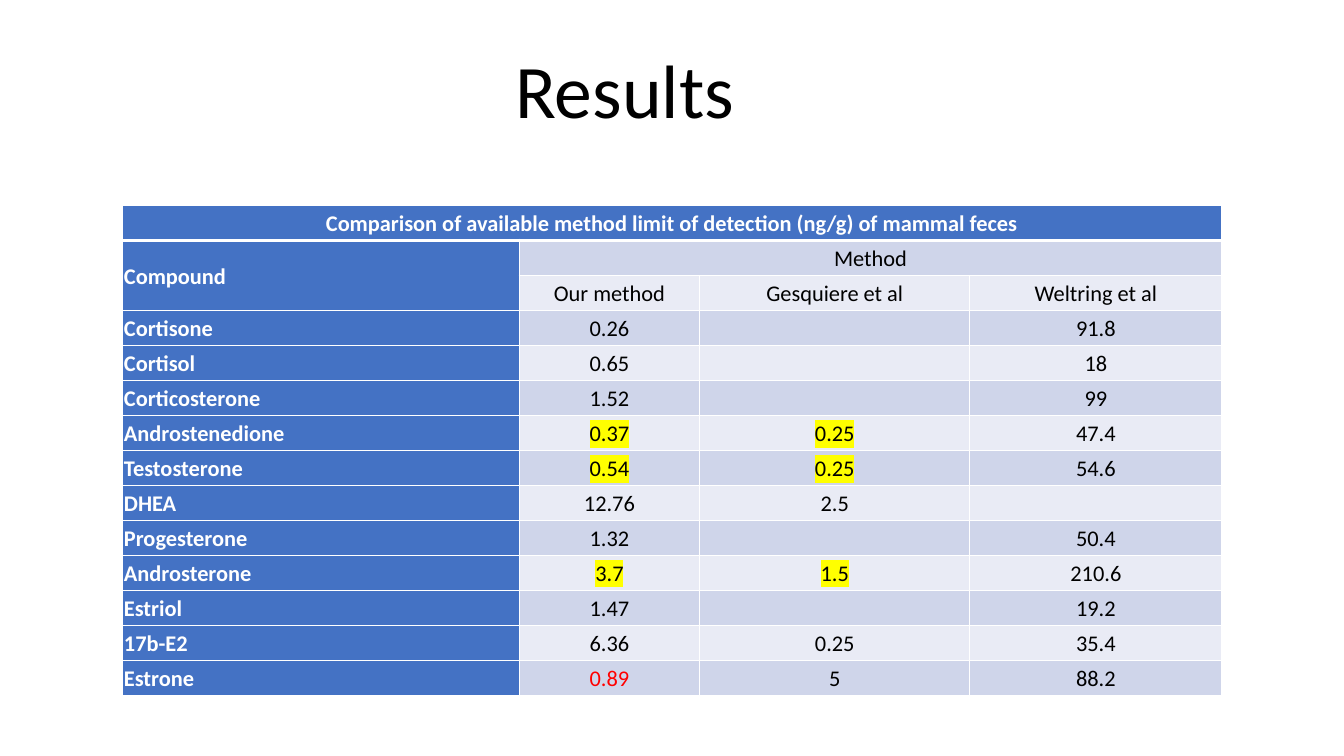
"""Build the results slide: a table comparing detection limits of three methods."""
import pptx
import pptx.dml.color
import pptx.enum.text
import pptx.oxml
import pptx.oxml.ns
import pptx.util

qn = pptx.oxml.ns.qn
Inches = pptx.util.Inches
Pt = pptx.util.Pt
ALIGN = pptx.enum.text.PP_ALIGN
ANCHOR = pptx.enum.text.MSO_ANCHOR

BLUE, WHITE, BLACK, RED, YELLOW = "4472C4", "FFFFFF", "000000", "FF0000", "FFFF00"
BANDS = ("E9EBF5", "CFD5EA")


def rgb(hex_color):
    """Turn a hex string into a colour."""
    return pptx.dml.color.RGBColor.from_string(hex_color)


def write(frame, text, size=16, color=BLACK, bold=False, align=ALIGN.CENTER, highlight=None):
    """Put formatted text into the first paragraph and return that paragraph."""
    paragraph = frame.paragraphs[0]
    paragraph.alignment = align
    if text:
        run = paragraph.add_run()
        run.text = text
        run.font.size = Pt(size)
        run.font.bold = bold
        run.font.name = "Calibri"
        run.font.color.rgb = rgb(color)
        if highlight:
            marker = pptx.oxml.parse_xml(
                '<a:highlight xmlns:a="http://schemas.openxmlformats.org/drawingml/2006/main">'
                f'<a:srgbClr val="{highlight}"/></a:highlight>')
            run._r.get_or_add_rPr().find(qn("a:solidFill")).addnext(marker)
    return paragraph


deck = pptx.Presentation()
deck.slide_width, deck.slide_height = Inches(13.33), Inches(7.5)
slide = deck.slides.add_slide(deck.slide_layouts[6])

heading = slide.shapes.add_textbox(Inches(4.8), Inches(0.37), Inches(2.79), Inches(1.02)).text_frame
heading.word_wrap = True
heading.vertical_anchor = ANCHOR.BOTTOM
heading_line = write(heading, "Results", size=54)
heading_line.line_spacing = 0.9
heading_line.space_after = Pt(6)

limits = [
    ("Comparison of available method limit of detection (ng/g) of mammal feces", "", "", ""),
    ("Compound", "Method", "", ""),
    ("", "Our method", "Gesquiere et al", "Weltring et al"),
    ("Cortisone", "0.26", "", "91.8"),
    ("Cortisol", "0.65", "", "18"),
    ("Corticosterone", "1.52", "", "99"),
    ("Androstenedione", "0.37", "0.25", "47.4"),
    ("Testosterone", "0.54", "0.25", "54.6"),
    ("DHEA", "12.76", "2.5", ""),
    ("Progesterone", "1.32", "", "50.4"),
    ("Androsterone", "3.7", "1.5", "210.6"),
    ("Estriol", "1.47", "", "19.2"),
    ("17b-E2", "6.36", "0.25", "35.4"),
    ("Estrone", "0.89", "5", "88.2"),
]
close_compounds = {"Androstenedione", "Testosterone", "Androsterone"}
column_widths = (3.94, 1.79, 2.68, 2.5)
table_height = 4.86

comparison = slide.shapes.add_table(
    len(limits), len(column_widths), Inches(1.21), Inches(2.04),
    Inches(sum(column_widths)), Inches(table_height)).table
for column, width in zip(comparison.columns, column_widths):
    column.width = Inches(width)
for row in comparison.rows:
    row.height = Inches(table_height / len(limits))

comparison.cell(0, 0).merge(comparison.cell(0, 3))
comparison.cell(1, 0).merge(comparison.cell(2, 0))
comparison.cell(1, 1).merge(comparison.cell(1, 3))

for r, values in enumerate(limits):
    for c, value in enumerate(values):
        cell = comparison.cell(r, c)
        is_header = r == 0 or c == 0
        cell.fill.solid()
        cell.fill.fore_color.rgb = rgb(BLUE if is_header else BANDS[r % 2])
        cell.vertical_anchor = ANCHOR.MIDDLE
        cell.margin_left = cell.margin_right = cell.margin_top = Inches(0.02)
        cell.margin_bottom = 0
        write(
            cell.text_frame, value, bold=is_header,
            color=WHITE if is_header else RED if value == "0.89" else BLACK,
            align=ALIGN.LEFT if c == 0 and r > 0 else ALIGN.CENTER,
            highlight=YELLOW if values[0] in close_compounds and c in (1, 2) else None)
        for order, side in enumerate("LRTB"):
            thick = (r, side) in ((0, "B"), (1, "T"))
            border = pptx.oxml.parse_xml(
                f'<a:ln{side} xmlns:a="http://schemas.openxmlformats.org/drawingml/2006/main"'
                f' w="{Pt(3 if thick else 1)}"><a:solidFill><a:srgbClr val="{WHITE}"/>'
                f'</a:solidFill></a:ln{side}>')
            cell._tc.get_or_add_tcPr().insert(order, border)

deck.save("out.pptx")
